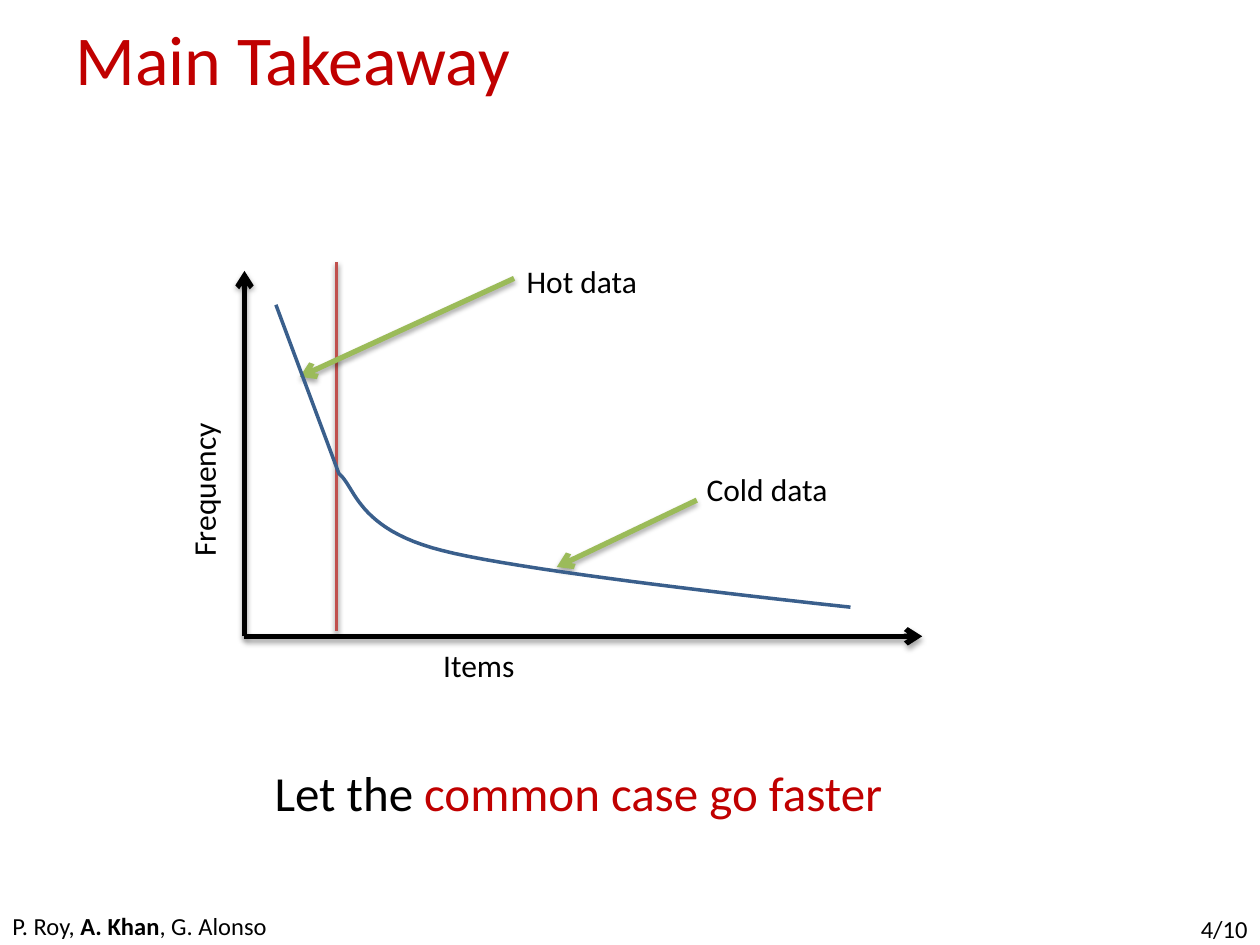
from dataclasses import dataclass

from lxml.etree import SubElement
from pptx import Presentation
from pptx.dml.color import RGBColor
from pptx.enum.shapes import MSO_CONNECTOR
from pptx.enum.text import MSO_ANCHOR, PP_ALIGN
from pptx.oxml.ns import qn
from pptx.util import Pt

Point = tuple[float, float]


@dataclass(frozen=True)
class Theme:
    font: str = "Calibri"
    black: str = "000000"
    red: str = "C00000"
    divider: str = "C0504D"
    green: str = "9BBB59"
    curve: str = "3A5F8C"
    title_size: int = 40
    message_size: int = 28
    label_size: int = 18
    footer_size: int = 14


THEME = Theme()


@dataclass(frozen=True)
class Run:
    text: str
    color: str = THEME.black
    bold: bool = False


@dataclass(frozen=True)
class Label:
    runs: tuple[Run, ...]
    left: float
    top: float
    width: float
    height: float = 28.8
    size: int = THEME.label_size
    rotation: int = 0
    wrap: bool = False
    align: PP_ALIGN = PP_ALIGN.LEFT
    anchor: MSO_ANCHOR = MSO_ANCHOR.TOP


@dataclass(frozen=True)
class Line:
    start: Point
    end: Point
    color: str
    width: float = 3
    arrow: bool = True
    shadow_opacity: int = 35
    shadow_distance: float = 1.8


ORIGIN = (139.7, 363.6)
LINES = (
    Line(ORIGIN, (527, ORIGIN[1]), THEME.black),
    Line(ORIGIN, (ORIGIN[0], 154.8), THEME.black),
    Line((192.2, 149.8), (192.2, 360.7), THEME.divider, 2, False, 38, 1.6),
    Line((293.8, 159.1), (171.4, 215.3), THEME.green),
    Line((398.2, 285.8), (318.2, 324), THEME.green),
)
LABELS = (
    Label((Run("Frequency"),), 69.1, 263.5, 94.3, rotation=270),
    Label((Run("Items"),), 246.2, 365.8, 55.4),
    Label((Run("Hot data"),), 293.8, 146.2, 78.5),
    Label((Run("Cold data"),), 396.7, 265, 84.2),
    Label((Run("Let the "), Run("common case go faster", THEME.red)),
          149.8, 432, 365.8, 41, THEME.message_size),
    Label((Run("P. Roy, "), Run("A. Khan", bold=True), Run(", G. Alonso")),
          0, 517, 354.2, size=THEME.footer_size, wrap=True),
    Label((Run("4/10"),), 552.2, 516.2, 167.8, size=THEME.footer_size,
          wrap=True, align=PP_ALIGN.RIGHT, anchor=MSO_ANCHOR.MIDDLE),
)

# Frequency curve: a straight drop, then two cubic segments (control, control, end)
CURVE_START = (157.7, 174.2)
CURVE_KNEE = (193.7, 270.7)
CURVE_SEGMENTS = (
    ((203, 277.9), (203.8, 302.4), (252.7, 314.6)),
    ((301.7, 327.6), (486, 347), (486, 347)),
)
CURVE_STEPS = 24


def write_runs(paragraph, runs: tuple[Run, ...], size: int) -> None:
    for item in runs:
        run = paragraph.add_run()
        run.text = item.text
        run.font.name = THEME.font
        run.font.size = Pt(size)
        run.font.bold = item.bold
        run.font.color.rgb = RGBColor.from_string(item.color)


def place(shape, left: float, top: float, width: float, height: float) -> None:
    shape.left, shape.top = Pt(left), Pt(top)
    shape.width, shape.height = Pt(width), Pt(height)


def add_title(slide, text: str) -> None:
    title = slide.shapes.title
    place(title, 36, 0, 648, 66.2)
    title.text_frame.vertical_anchor = MSO_ANCHOR.MIDDLE
    paragraph = title.text_frame.paragraphs[0]
    paragraph.alignment = PP_ALIGN.LEFT
    write_runs(paragraph, (Run(text, THEME.red),), THEME.title_size)


def add_label(slide, label: Label) -> None:
    shape = slide.shapes.add_textbox(0, 0, 0, 0)
    place(shape, label.left, label.top, label.width, label.height)
    shape.rotation = label.rotation
    frame = shape.text_frame
    frame.word_wrap = label.wrap
    frame.vertical_anchor = label.anchor
    paragraph = frame.paragraphs[0]
    paragraph.alignment = label.align
    write_runs(paragraph, label.runs, label.size)


def add_line(slide, line: Line) -> None:
    connector = slide.shapes.add_connector(
        MSO_CONNECTOR.STRAIGHT, *map(Pt, line.start + line.end))
    connector.line.color.rgb = RGBColor.from_string(line.color)
    connector.line.width = Pt(line.width)
    properties = connector._element.spPr
    if line.arrow:
        SubElement(properties.find(qn("a:ln")), qn("a:tailEnd"), type="arrow")
    # Soft shadow straight below the line
    effects = SubElement(properties, qn("a:effectLst"))
    shadow = SubElement(effects, qn("a:outerShdw"), blurRad=str(Pt(3.1)),
                        dist=str(Pt(line.shadow_distance)), dir="5400000", rotWithShape="0")
    color = SubElement(shadow, qn("a:srgbClr"), val=THEME.black)
    SubElement(color, qn("a:alpha"), val=str(line.shadow_opacity * 1000))


def cubic_point(controls: tuple[Point, ...], t: float) -> Point:
    weights = ((1 - t) ** 3, 3 * t * (1 - t) ** 2, 3 * t * t * (1 - t), t ** 3)
    x, y = (sum(w * c for w, c in zip(weights, axis)) for axis in zip(*controls))
    return x, y


def add_curve(slide) -> None:
    points = [CURVE_KNEE]
    for segment in CURVE_SEGMENTS:
        controls = (points[-1], *segment)
        points += [cubic_point(controls, step / CURVE_STEPS)
                   for step in range(1, CURVE_STEPS + 1)]
    builder = slide.shapes.build_freeform(*map(Pt, CURVE_START))
    builder.add_line_segments([(Pt(x), Pt(y)) for x, y in points], close=False)
    shape = builder.convert_to_shape()
    shape.shadow.inherit = False
    shape.fill.background()
    shape.line.color.rgb = RGBColor.from_string(THEME.curve)
    shape.line.width = Pt(2)


def main() -> None:
    presentation = Presentation()
    presentation.slide_width, presentation.slide_height = Pt(720), Pt(540)
    slide = presentation.slides.add_slide(presentation.slide_layouts[5])
    add_title(slide, "Main Takeaway")
    # Axes, divider and pointers lie beneath the curve
    for line in LINES:
        add_line(slide, line)
    add_curve(slide)
    for label in LABELS:
        add_label(slide, label)
    presentation.save("out.pptx")


if __name__ == "__main__":
    main()
